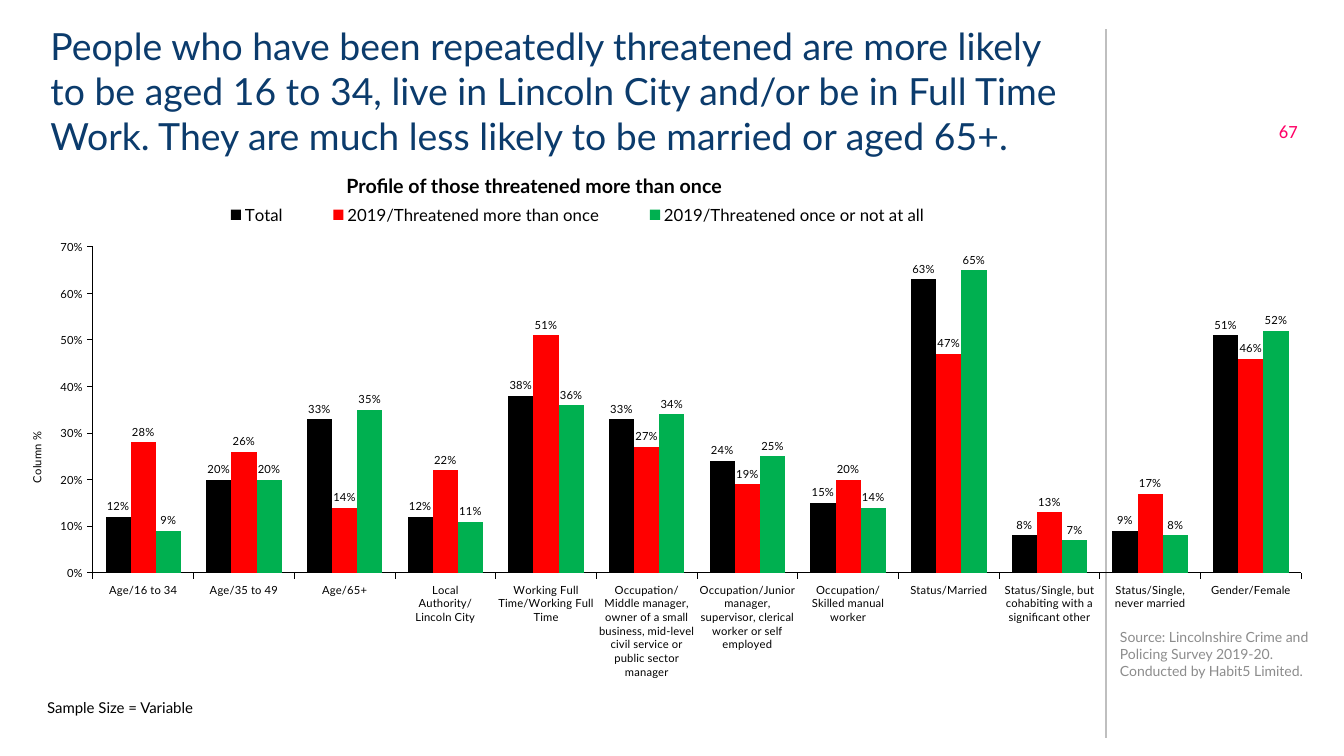
from dataclasses import dataclass

from lxml import etree
from pptx import Presentation
from pptx.chart.data import CategoryChartData
from pptx.dml.color import RGBColor
from pptx.enum.chart import XL_CHART_TYPE, XL_LABEL_POSITION, XL_LEGEND_POSITION, XL_TICK_MARK
from pptx.enum.shapes import MSO_CONNECTOR
from pptx.enum.text import MSO_ANCHOR, PP_ALIGN
from pptx.oxml import parse_xml
from pptx.oxml.ns import nsdecls, qn
from pptx.util import Inches, Pt

CLUSTERED = XL_CHART_TYPE.COLUMN_CLUSTERED
OUTSIDE_END = XL_LABEL_POSITION.OUTSIDE_END
LEGEND_TOP = XL_LEGEND_POSITION.TOP
TICK_OUT = XL_TICK_MARK.OUTSIDE
TICK_NONE = XL_TICK_MARK.NONE
STRAIGHT = MSO_CONNECTOR.STRAIGHT
TOP, MIDDLE = MSO_ANCHOR.TOP, MSO_ANCHOR.MIDDLE
LEFT, CENTER, RIGHT = PP_ALIGN.LEFT, PP_ALIGN.CENTER, PP_ALIGN.RIGHT


@dataclass(frozen=True)
class Theme:
    font: str = "Lato"
    number_font: str = "Calibri"
    title: str = "0B3B6C"
    text: str = "000000"
    source: str = "8C8C8C"
    divider: str = "BFBFBF"
    number: str = "FF0066"
    series: tuple = ("000000", "FF0000", "00B050")
    title_size: float = 26.7
    heading_size: float = 14
    number_size: float = 13.3
    legend_size: float = 12
    note_size: float = 10.7
    source_size: float = 10
    chart_size: float = 8


THEME = Theme()

CATEGORIES = [
    "Age/16 to 34",
    "Age/35 to 49",
    "Age/65+",
    "Local Authority/Lincoln City",
    "Working Full Time/Working Full Time",
    "Occupation/Middle manager, owner of a small business, mid-level civil service or public sector manager",
    "Occupation/Junior manager, supervisor, clerical worker or self employed",
    "Occupation/Skilled manual worker",
    "Status/Married",
    "Status/Single, but cohabiting with a significant other",
    "Status/Single, never married",
    "Gender/Female",
]
SERIES = {
    "Total": [0.12, 0.2, 0.33, 0.12, 0.38, 0.33, 0.24, 0.15, 0.63, 0.08, 0.09, 0.51],
    "2019/Threatened more than once": [0.28, 0.26, 0.14, 0.22, 0.51, 0.27, 0.19, 0.2, 0.47, 0.13, 0.17, 0.46],
    "2019/Threatened once or not at all": [0.09, 0.2, 0.35, 0.11, 0.36, 0.34, 0.25, 0.14, 0.65, 0.07, 0.08, 0.52],
}


def style_font(font, size, color, name=THEME.font, bold=False):
    font.size = Pt(size)
    font.name = name
    font.bold = bold
    font.color.rgb = RGBColor.from_string(color)


def add_text(slide, box, text, size, color, name=THEME.font, bold=False,
             align=LEFT, anchor=TOP, insets=(0.1, 0.05)):
    text_frame = slide.shapes.add_textbox(*map(Inches, box)).text_frame
    text_frame.word_wrap = True
    text_frame.vertical_anchor = anchor
    text_frame.margin_left = text_frame.margin_right = Inches(insets[0])
    text_frame.margin_top = text_frame.margin_bottom = Inches(insets[1])
    text_frame.text = text
    paragraph = text_frame.paragraphs[0]
    paragraph.alignment = align
    style_font(paragraph.runs[0].font, size, color, name, bold)


def add_divider(slide, left, top, height):
    divider = slide.shapes.add_connector(
        STRAIGHT, Inches(left), Inches(top), Inches(left), Inches(top + height))
    divider.line.color.rgb = RGBColor.from_string(THEME.divider)
    divider.line.width = Pt(1)
    etree.SubElement(divider.element.spPr, qn("a:effectLst"))


def set_layout(element, index, inner=False, **lengths):
    for layout in element.findall(qn("c:layout")):
        element.remove(layout)
    target = '<c:layoutTarget val="inner"/>' if inner else ""
    modes = "".join(f'<c:{key}Mode val="edge"/>' for key in "xy")
    values = "".join(f'<c:{key} val="{value}"/>' for key, value in lengths.items())
    element.insert(index, parse_xml(
        f'<c:layout {nsdecls("c")}><c:manualLayout>{target}{modes}{values}'
        "</c:manualLayout></c:layout>"))


def style_axis(axis):
    axis.has_major_gridlines = False
    axis.major_tick_mark = TICK_OUT
    axis.minor_tick_mark = TICK_NONE
    axis.format.line.color.rgb = RGBColor.from_string(THEME.text)
    axis.format.line.width = Pt(0.75)
    style_font(axis.tick_labels.font, THEME.chart_size, THEME.text)


def add_profile_chart(slide, box):
    data = CategoryChartData(number_format="0%")
    data.categories = CATEGORIES
    for name, values in SERIES.items():
        data.add_series(name, values)
    chart = slide.shapes.add_chart(CLUSTERED, *map(Inches, box), data).chart
    style_font(chart.font, THEME.chart_size, THEME.text)
    chart.has_title = False

    plot = chart.plots[0]
    plot.gap_width = 100
    plot.overlap = 0
    plot.vary_by_categories = False
    for series, color in zip(plot.series, THEME.series):
        series.format.fill.solid()
        series.format.fill.fore_color.rgb = RGBColor.from_string(color)
        series.invert_if_negative = False
        labels = series.data_labels
        labels.show_value = True
        labels.number_format = "0%"
        labels.number_format_is_linked = False
        labels.position = OUTSIDE_END
        style_font(labels.font, THEME.chart_size, THEME.text)

    style_axis(chart.category_axis)
    value_axis = chart.value_axis
    style_axis(value_axis)
    value_axis.minimum_scale = 0
    value_axis.maximum_scale = 0.7
    value_axis.major_unit = 0.1
    value_axis.tick_labels.number_format = "0%"
    value_axis.tick_labels.number_format_is_linked = False
    title_frame = value_axis.axis_title.text_frame
    title_frame.text = "Column %"
    style_font(title_frame.paragraphs[0].runs[0].font, THEME.chart_size, THEME.text)
    body = title_frame._txBody.find(qn("a:bodyPr"))
    body.set("rot", "-5400000")
    body.set("vert", "horz")

    chart.has_legend = True
    legend = chart.legend
    legend.position = LEGEND_TOP
    legend.include_in_layout = False
    style_font(legend.font, THEME.legend_size, THEME.text)

    set_layout(plot._element.getparent(), 0, inner=True, x=0.07, y=0.11, w=0.91, h=0.66)
    set_layout(legend._element, 1, x=0.14, y=0.01, w=0.59, h=0.07)
    set_layout(value_axis.axis_title._element, 1, x=0.02, y=0.48)


def add_survey_slide(presentation):
    slide = presentation.slides.add_slide(presentation.slide_layouts[6])
    add_divider(slide, 10.97, 0.29, 7.03)
    add_text(slide, (11.01, 5.96, 2.32, 1.05),
             "Source: Lincolnshire Crime and Policing Survey 2019-20. Conducted by Habit5 Limited.",
             THEME.source_size, THEME.source, anchor=MIDDLE)
    add_text(slide, (1.3, 1.68, 8, 0.34), "Profile of those threatened more than once",
             THEME.heading_size, THEME.text, bold=True, align=CENTER)
    add_profile_chart(slide, (0, 1.91, 13.17, 4.9))
    add_text(slide, (0.37, 6.88, 8, 0.28), "Sample Size = Variable",
             THEME.note_size, THEME.text)
    add_text(slide, (0.37, 0.16, 10.49, 1.62),
             "People who have been repeatedly threatened are more likely to be aged 16 to 34, "
             "live in Lincoln City and/or be in Full Time Work. "
             "They are much less likely to be married or aged 65+.",
             THEME.title_size, THEME.title, insets=(0.13, 0.07))
    add_text(slide, (9.86, 1.04, 3.11, 0.52), "67", THEME.number_size, THEME.number,
             name=THEME.number_font, align=RIGHT, anchor=MIDDLE)


def main():
    presentation = Presentation()
    presentation.slide_width = Inches(13.33)
    presentation.slide_height = Inches(7.5)
    add_survey_slide(presentation)
    presentation.save("out.pptx")


if __name__ == "__main__":
    main()
